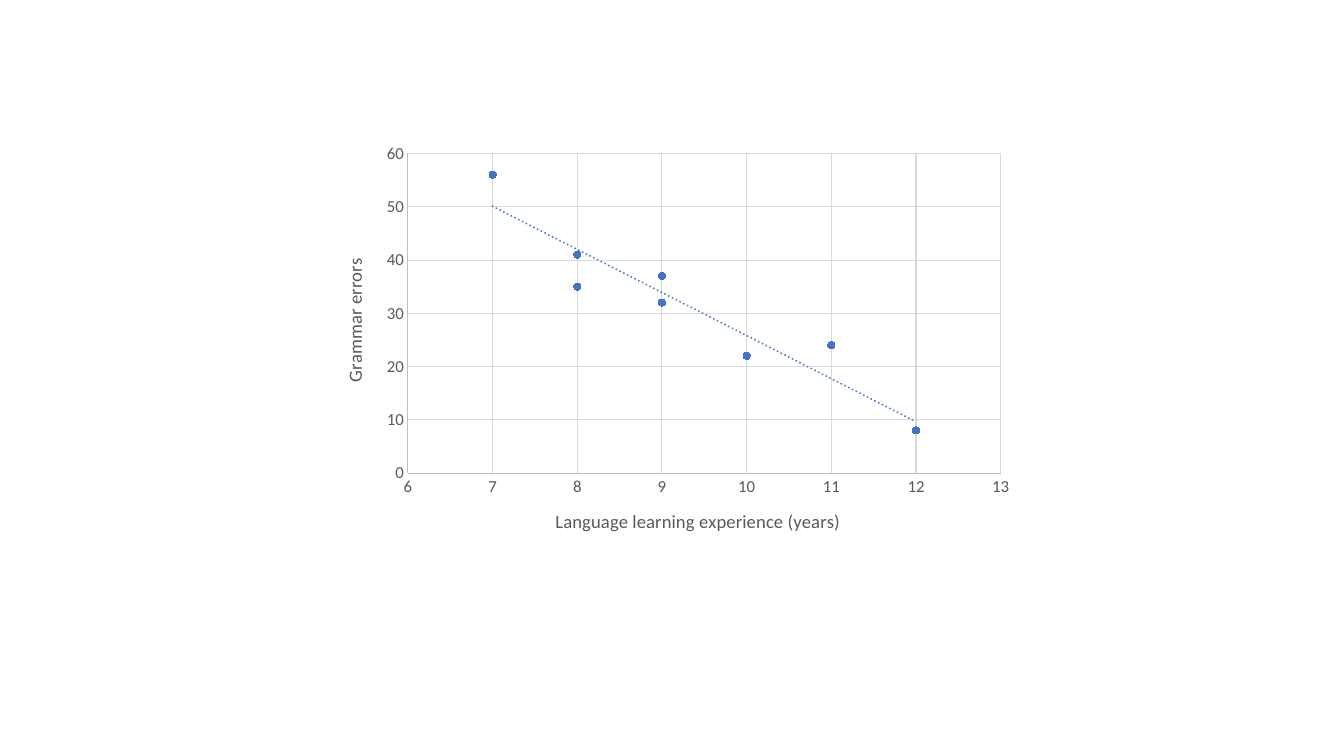
from lxml.etree import fromstring
from pptx import Presentation
from pptx.chart.data import XyChartData
from pptx.dml.color import RGBColor
from pptx.enum.chart import XL_CHART_TYPE as CT, XL_MARKER_STYLE as MS, XL_TICK_MARK as TM
from pptx.util import Pt

FONT = "Calibri"
COLORS = {"text": "595959", "axis": "BFBFBF", "grid": "D9D9D9", "points": "4472C4"}
POINTS = [(9, 37), (12, 8), (7, 56), (10, 22), (8, 35), (11, 24), (9, 32), (8, 41)]
TRENDLINE = f"""
<c:trendline xmlns:c="http://schemas.openxmlformats.org/drawingml/2006/chart"
             xmlns:a="http://schemas.openxmlformats.org/drawingml/2006/main">
  <c:spPr><a:ln w="{Pt(1.5)}" cap="rnd">
    <a:solidFill><a:srgbClr val="{COLORS['points']}"/></a:solidFill>
    <a:prstDash val="sysDot"/>
  </a:ln></c:spPr>
  <c:trendlineType val="linear"/>
  <c:dispRSqr val="0"/>
  <c:dispEq val="0"/>
</c:trendline>"""


def rgb(name):
    return RGBColor.from_string(COLORS[name])


def set_font(font, size):
    values = {"name": FONT, "size": Pt(size), "bold": False}
    for key, value in values.items():
        setattr(font, key, value)
    font.color.rgb = rgb("text")


prs = Presentation()
prs.slide_width, prs.slide_height = Pt(960), Pt(540)
s = prs.slides.add_slide(prs.slide_layouts[6])

data = XyChartData()
errors = data.add_series("Series 1")
for years, count in POINTS:
    errors.add_data_point(years, count)

frame = s.shapes.add_chart(CT.XY_SCATTER, Pt(229), Pt(96.5), Pt(502), Pt(301), data)
chart = frame.chart
chart.has_legend = False
chart.has_title = False
set_font(chart.font, 12)

axes = [
    (chart.category_axis, "Language learning experience (years)", 6, 13, 1, 0),
    (chart.value_axis, "Grammar errors", 0, 60, 10, -90),
]
for axis, title, low, high, step, angle in axes:
    values = {
        "minimum_scale": low, "maximum_scale": high, "major_unit": step,
        "major_tick_mark": TM.NONE, "minor_tick_mark": TM.NONE,
        "has_major_gridlines": True, "has_title": True,
    }
    for key, value in values.items():
        setattr(axis, key, value)
    for part, color in ((axis, "axis"), (axis.major_gridlines, "grid")):
        part.format.line.width = Pt(0.75)
        part.format.line.color.rgb = rgb(color)
    set_font(axis.tick_labels.font, 12)
    tf = axis.axis_title.text_frame
    r = tf.paragraphs[0].add_run()
    r.text = title
    set_font(r.font, 13.3)
    tf._txBody.bodyPr.set("rot", str(angle * 60000))

plot = chart.plots[0]
plot.vary_by_categories = False
series = plot.series[0]
series.format.line.fill.background()
marker = series.marker
marker.style, marker.size = MS.CIRCLE, 5
marker.format.fill.solid()
marker.format.fill.fore_color.rgb = rgb("points")
marker.format.line.color.rgb = rgb("points")
series._element.xpath("c:xVal")[0].addprevious(fromstring(TRENDLINE))

prs.save("out.pptx")
